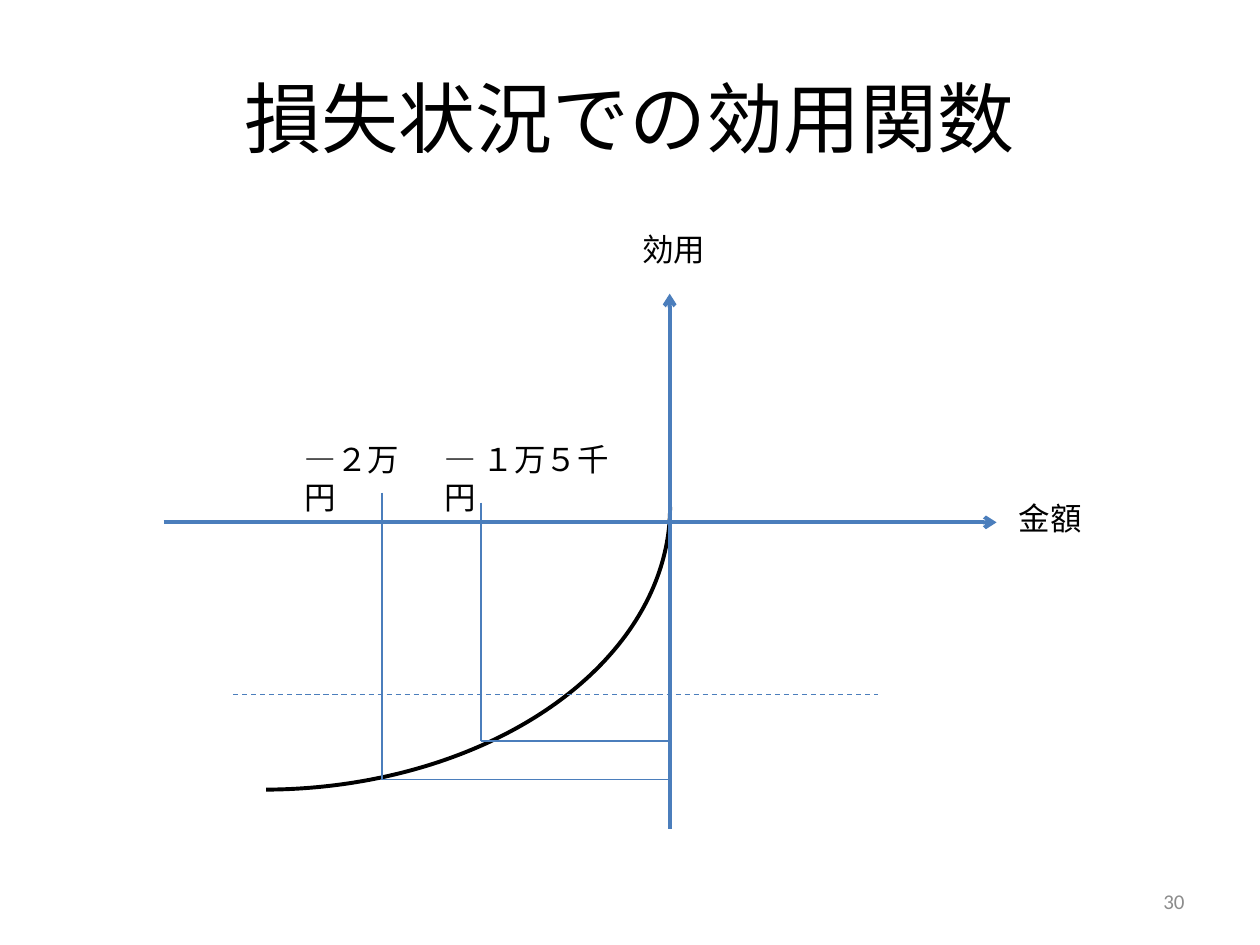
"""Build a slide that sketches the utility function for losses."""
from dataclasses import dataclass

from lxml.etree import SubElement
from pptx import Presentation
from pptx.dml.color import RGBColor
from pptx.enum.dml import MSO_LINE
from pptx.enum.shapes import MSO_CONNECTOR, MSO_SHAPE
from pptx.enum.text import MSO_ANCHOR, PP_ALIGN
from pptx.oxml.ns import qn
from pptx.util import Cm, Pt

COLORS = {"text": "000000", "curve": "000000", "line": "4B7EBC", "number": "8C8C8C"}
FONT = "Calibri"
ORIGIN_X, ORIGIN_Y = 13.5, 10.53
LABEL_H = 1.02


@dataclass
class Line:
    x1: float
    y1: float
    x2: float
    y2: float
    width: float = 0.75
    arrow: bool = False
    dashed: bool = False


@dataclass
class Label:
    text: str
    left: float
    top: float
    width: float
    size: int = 18
    color: str = "text"
    align: PP_ALIGN = PP_ALIGN.LEFT
    anchor: MSO_ANCHOR = MSO_ANCHOR.TOP


@dataclass
class Guide:
    x: float
    top: float
    bottom: float


AXES = [
    Line(3.3, ORIGIN_Y, 20.09, ORIGIN_Y, 2.25, arrow=True),
    Line(ORIGIN_X, 16.71, ORIGIN_X, 5.92, 2.25, arrow=True),
]
GUIDES = [Guide(7.7, 9.93, 15.72), Guide(9.7, 10.13, 14.94)]
MIDLINE = Line(4.7, 14, 17.7, 14, dashed=True)
LABELS = [
    Label("― １万５千円", 8.71, 8.74, 4.04),
    Label("―２万円", 5.89, 8.74, 2.82),
    Label("効用", 12.7, 4.52, 1.8),
    Label("金額", 20.29, 9.93, 1.8),
    Label("30", 18.21, 17.65, 5.92, 12, "number", PP_ALIGN.RIGHT, MSO_ANCHOR.MIDDLE),
]


def rgb(name: str) -> RGBColor:
    return RGBColor.from_string(COLORS[name])


def style_text(p, size: int, color: str, align: PP_ALIGN) -> None:
    p.alignment = align
    p.font.name = FONT
    p.font.size = Pt(size)
    p.font.color.rgb = rgb(color)


def add_title(s, text: str) -> None:
    sp = s.shapes.title
    sp.left, sp.top, sp.width, sp.height = Cm(1.27), Cm(0.76), Cm(22.86), Cm(3.18)
    tf = sp.text_frame
    tf.text = text
    tf.vertical_anchor = MSO_ANCHOR.MIDDLE
    style_text(tf.paragraphs[0], 44, "text", PP_ALIGN.CENTER)


def add_curve(s) -> None:
    sp = s.shapes.add_shape(MSO_SHAPE.ARC, Cm(-2.9), Cm(4.52), Cm(16.41), Cm(11.4))
    sp.adjustments[0], sp.adjustments[1] = 162.36, 0
    sp.shadow.inherit = False
    sp.fill.background()
    sp.line.color.rgb = rgb("curve")
    sp.line.width = Pt(2.25)
    sp._element.spPr.find(qn("a:xfrm")).set("flipV", "1")


def add_line(s, line: Line) -> None:
    cxn = s.shapes.add_connector(
        MSO_CONNECTOR.STRAIGHT, Cm(line.x1), Cm(line.y1), Cm(line.x2), Cm(line.y2))
    cxn.line.color.rgb = rgb("line")
    cxn.line.width = Pt(line.width)
    if line.dashed:
        cxn.line.dash_style = MSO_LINE.DASH
    spPr = cxn._element.spPr
    if line.arrow:
        SubElement(spPr.find(qn("a:ln")), qn("a:tailEnd"), type="arrow")
    SubElement(spPr, qn("a:effectLst"))


def add_guide(s, guide: Guide) -> None:
    add_line(s, Line(guide.x, guide.top, guide.x, guide.bottom))
    add_line(s, Line(ORIGIN_X, guide.bottom, guide.x, guide.bottom))


def add_label(s, label: Label) -> None:
    sp = s.shapes.add_textbox(
        Cm(label.left), Cm(label.top), Cm(label.width), Cm(LABEL_H))
    tf = sp.text_frame
    tf.word_wrap = True
    tf.vertical_anchor = label.anchor
    tf.text = label.text
    style_text(tf.paragraphs[0], label.size, label.color, label.align)


def main() -> None:
    prs = Presentation()
    prs.slide_width, prs.slide_height = Cm(25.4), Cm(19.05)
    s = prs.slides.add_slide(prs.slide_layouts[5])
    add_title(s, "損失状況での効用関数")
    add_curve(s)
    for axis in AXES:
        add_line(s, axis)
    for guide in GUIDES:
        add_guide(s, guide)
    add_line(s, MIDLINE)
    for label in LABELS:
        add_label(s, label)
    prs.save("out.pptx")


if __name__ == "__main__":
    main()
